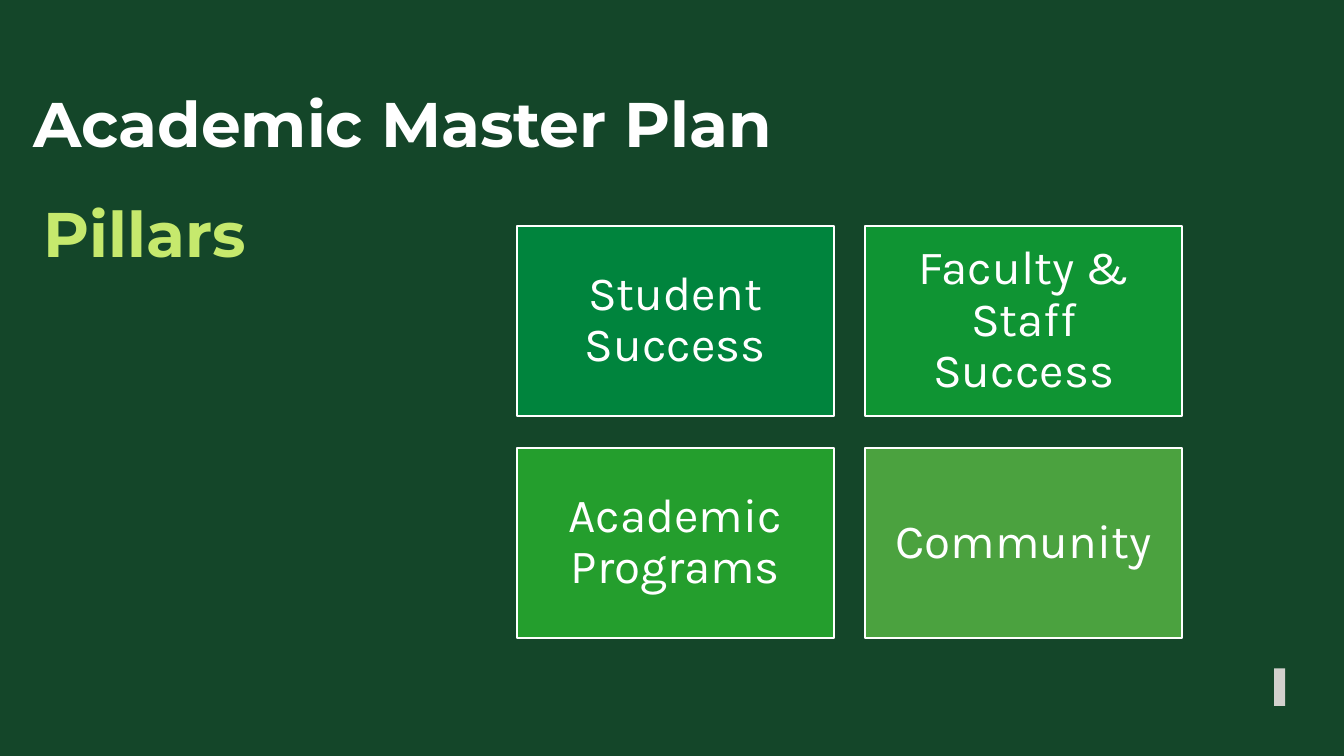
"""Build the Academic Master Plan pillars slide."""
from pptx import Presentation
from pptx.dml.color import RGBColor
from pptx.enum.shapes import MSO_SHAPE as Shape
from pptx.enum.text import MSO_ANCHOR as Anchor, MSO_AUTO_SIZE as AutoSize, PP_ALIGN as Align
from pptx.util import Cm, Pt


def color(value):
    return RGBColor.from_string(value)


def write(frame, text, size, font, fill="FFFFFF", bold=False, align=Align.LEFT, spacing=1.0):
    paragraph = frame.paragraphs[0]
    paragraph.text = text
    paragraph.alignment = align
    paragraph.line_spacing = spacing
    paragraph.font.size = Pt(size)
    paragraph.font.name = font
    paragraph.font.bold = bold
    paragraph.font.color.rgb = color(fill)


def set_margins(frame, horizontal, vertical):
    frame.margin_left = frame.margin_right = Cm(horizontal)
    frame.margin_top = frame.margin_bottom = Cm(vertical)


class SlideBuilder:
    heading_font = "Montserrat"
    body_font = "Karla"

    def __init__(self, slide, background):
        self.slide = slide
        slide.background.fill.solid()
        slide.background.fill.fore_color.rgb = color(background)

    def heading(self, text, left, top, width, height, fill, margins, wrap):
        box = self.slide.shapes.add_textbox(Cm(left), Cm(top), Cm(width), Cm(height))
        frame = box.text_frame
        frame.word_wrap = wrap
        frame.auto_size = AutoSize.SHAPE_TO_FIT_TEXT
        set_margins(frame, *margins)
        write(frame, text, 45, self.heading_font, fill, bold=True)

    def rectangle(self, left, top, width, height, fill, outline=None):
        shape = self.slide.shapes.add_shape(
            Shape.RECTANGLE, Cm(left), Cm(top), Cm(width), Cm(height))
        shape.shadow.inherit = False
        shape.fill.solid()
        shape.fill.fore_color.rgb = color(fill)
        if outline:
            shape.line.color.rgb = color(outline)
            shape.line.width = Pt(1.5)
        else:
            shape.line.fill.background()
        return shape

    def pillar(self, text, left, top, width, height, fill):
        frame = self.rectangle(left, top, width, height, fill, "FFFFFF").text_frame
        frame.word_wrap = True
        frame.vertical_anchor = Anchor.MIDDLE
        set_margins(frame, 0.36, 0.36)
        write(frame, text, 34, self.body_font, align=Align.CENTER, spacing=0.9)


def main():
    presentation = Presentation()
    presentation.slide_width = Cm(33.87)
    presentation.slide_height = Cm(19.05)
    slide = presentation.slides.add_slide(presentation.slide_layouts[6])
    builder = SlideBuilder(slide, "144629")

    builder.heading("Academic Master Plan", 0.84, 2.13, 22.48, 1.93, "FFFFFF", (0, 0), True)
    builder.heading("Pillars", 0.84, 4.78, 5.66, 2.18, "C6E96D", (0.25, 0.13), False)
    builder.rectangle(32.11, 16.84, 0.28, 0.95, "D2D1CD")

    pillars = [
        ("Student Success", "00843D"),
        ("Faculty & Staff Success", "0F9433"),
        ("Academic Programs", "249E2D"),
        ("Community", "4BA23F"),
    ]
    width, height, gap = 7.98, 4.79, 0.8
    for index, (text, fill) in enumerate(pillars):
        row, column = divmod(index, 2)
        left = 13.03 + column * (width + gap)
        top = 5.69 + row * (height + gap)
        builder.pillar(text, left, top, width, height, fill)

    presentation.save("out.pptx")


if __name__ == "__main__":
    main()
